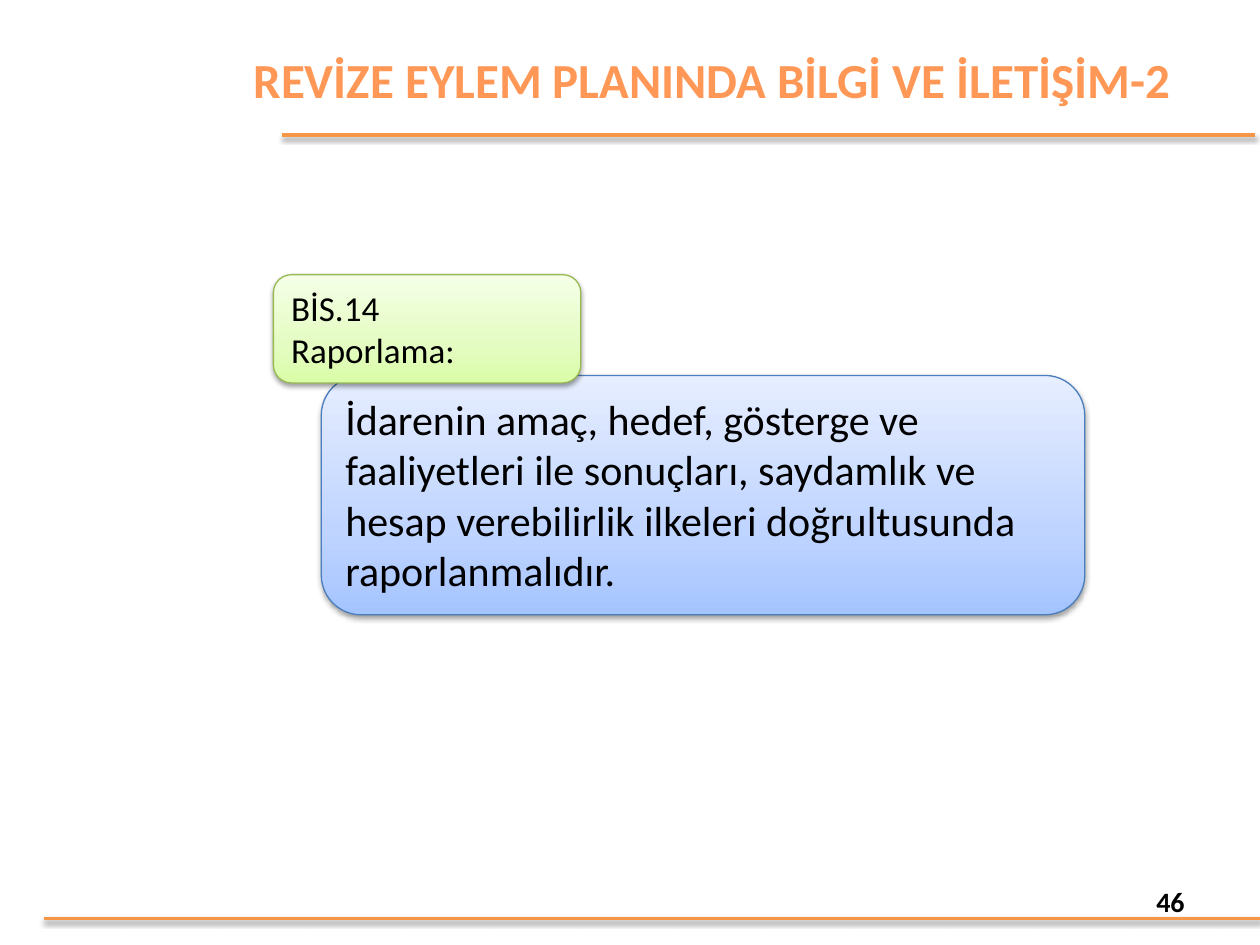
from dataclasses import dataclass

from lxml.etree import SubElement
from pptx import Presentation
from pptx.dml.color import RGBColor
from pptx.enum.shapes import MSO_CONNECTOR, MSO_SHAPE
from pptx.enum.text import MSO_ANCHOR, MSO_AUTO_SIZE, PP_ALIGN
from pptx.oxml.ns import qn
from pptx.slide import Slide
from pptx.text.text import TextFrame
from pptx.util import Inches, Pt


@dataclass(frozen=True)
class Theme:
    font: str = "Calibri"
    text: str = "000000"
    title: str = "FF9856"
    rule: str = "F79646"
    title_size: int = 28
    body_size: int = 24
    label_size: int = 20
    number_size: int = 16
    rule_width: float = 2
    outline_width: float = 0.75


@dataclass(frozen=True)
class Box:
    left: float
    top: float
    width: float
    height: float


@dataclass(frozen=True)
class Card:
    box: Box
    text: str
    size: int
    outline: str
    gradient: tuple[str, str, str]


@dataclass(frozen=True)
class Rule:
    left: float
    right: float
    top: float


THEME = Theme()
RULES = (Rule(0.35, 10, 7.29), Rule(2.24, 9.96, 1.07))
CARDS = (
    Card(
        Box(2.55, 2.98, 6.06, 1.9),
        "İdarenin amaç, hedef, gösterge ve faaliyetleri ile sonuçları, saydamlık ve "
        "hesap verebilirlik ilkeleri doğrultusunda raporlanmalıdır.",
        THEME.body_size, "4B7EBC", ("A4C4FF", "BFD4FF", "E6EEFF"),
    ),
    Card(
        Box(2.17, 2.18, 2.44, 0.86), "BİS.14\nRaporlama:",
        THEME.label_size, "98B955", ("DAFDA7", "E4FCC2", "F5FFE7"),
    ),
)


def inches(box: Box) -> tuple[Inches, ...]:
    return tuple(Inches(value) for value in (box.left, box.top, box.width, box.height))


def add_soft_shadow(shape) -> None:
    effects = SubElement(shape._element.spPr, qn("a:effectLst"))
    shadow = SubElement(
        effects, qn("a:outerShdw"), blurRad=str(Pt(3.1)), dist=str(Pt(1.6)),
        dir="5400000", rotWithShape="0",
    )
    color = SubElement(shadow, qn("a:srgbClr"), val="000000")
    SubElement(color, qn("a:alpha"), val="38000")


def set_upward_gradient(shape, colors: tuple[str, str, str]) -> None:
    """Fill the shape from its bottom edge to its top edge."""
    shape.fill.gradient()
    gradient = shape._element.spPr.find(qn("a:gradFill"))
    for child in list(gradient):
        gradient.remove(child)
    stops = SubElement(gradient, qn("a:gsLst"))
    for position, color in zip((0, 35, 100), colors):
        stop = SubElement(stops, qn("a:gs"), pos=str(position * 1000))
        SubElement(stop, qn("a:srgbClr"), val=color)
    SubElement(gradient, qn("a:lin"), ang="16200000", scaled="0")


def write_text(frame: TextFrame, text: str, size: int, color: str, align: PP_ALIGN,
               anchor: MSO_ANCHOR, bold: bool = False) -> None:
    frame.text = text
    frame.word_wrap = True
    frame.vertical_anchor = anchor
    for paragraph in frame.paragraphs:
        paragraph.alignment = align
        for run in paragraph.runs:
            run.font.name = THEME.font
            run.font.size = Pt(size)
            run.font.bold = bold
            run.font.color.rgb = RGBColor.from_string(color)


def draw_rule(slide: Slide, rule: Rule) -> None:
    line = slide.shapes.add_connector(
        MSO_CONNECTOR.STRAIGHT, Inches(rule.left), Inches(rule.top),
        Inches(rule.right), Inches(rule.top),
    )
    line.line.color.rgb = RGBColor.from_string(THEME.rule)
    line.line.width = Pt(THEME.rule_width)
    add_soft_shadow(line)


def draw_card(slide: Slide, card: Card) -> None:
    shape = slide.shapes.add_shape(MSO_SHAPE.ROUNDED_RECTANGLE, *inches(card.box))
    set_upward_gradient(shape, card.gradient)
    shape.line.color.rgb = RGBColor.from_string(card.outline)
    shape.line.width = Pt(THEME.outline_width)
    add_soft_shadow(shape)
    write_text(shape.text_frame, card.text, card.size, THEME.text,
               PP_ALIGN.LEFT, MSO_ANCHOR.TOP)
    shape.text_frame.auto_size = MSO_AUTO_SIZE.SHAPE_TO_FIT_TEXT


def draw_bold_text(slide: Slide, box: Box, text: str, size: int, color: str,
                   align: PP_ALIGN) -> None:
    frame = slide.shapes.add_textbox(*inches(box)).text_frame
    write_text(frame, text, size, color, align, MSO_ANCHOR.MIDDLE, bold=True)


def main() -> None:
    presentation = Presentation()
    presentation.slide_width = Inches(10)
    presentation.slide_height = Inches(7.5)
    slide = presentation.slides.add_slide(presentation.slide_layouts[6])
    for rule in RULES:
        draw_rule(slide, rule)
    draw_bold_text(slide, Box(7.17, 6.95, 2.33, 0.4), "46",
                   THEME.number_size, THEME.text, PP_ALIGN.RIGHT)
    for card in CARDS:
        draw_card(slide, card)
    draw_bold_text(slide, Box(1.85, 0.36, 7.6, 0.53),
                   "REVİZE EYLEM PLANINDA BİLGİ VE İLETİŞİM-2",
                   THEME.title_size, THEME.title, PP_ALIGN.CENTER)
    presentation.save("out.pptx")


if __name__ == "__main__":
    main()
